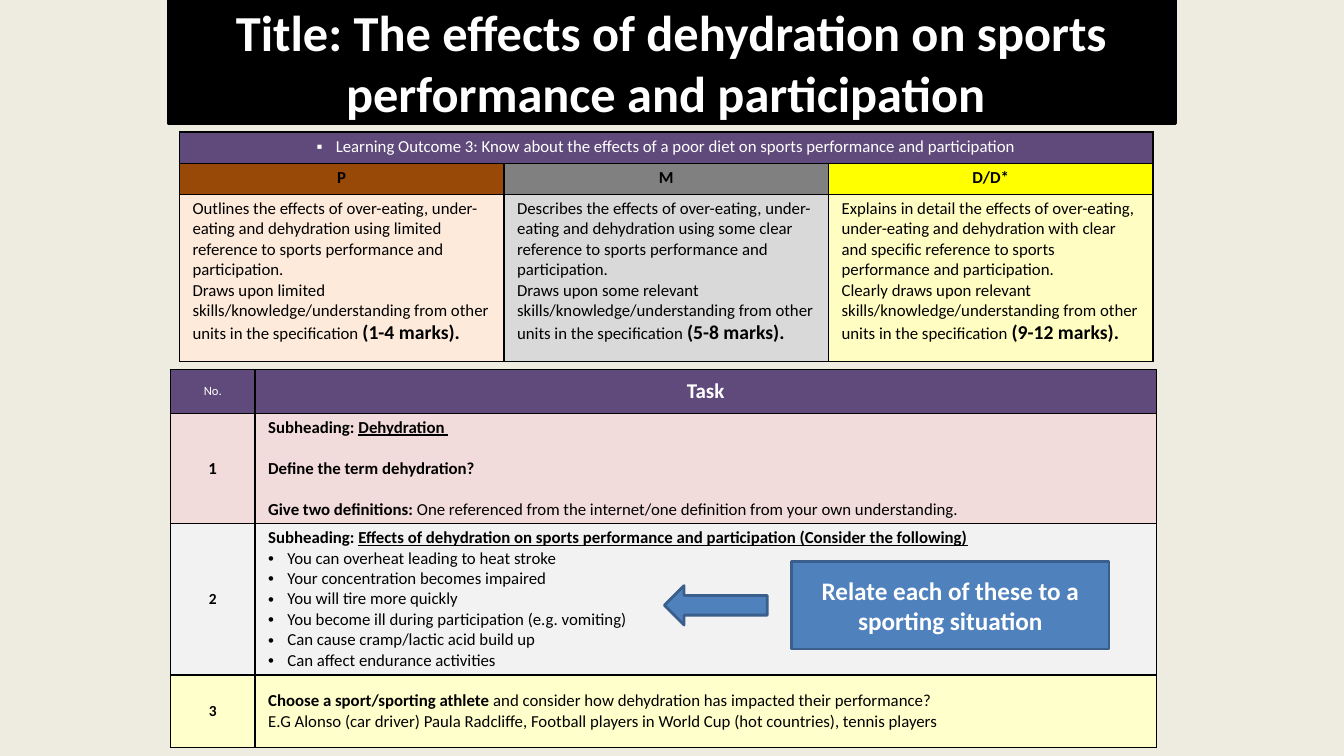
import pptx
import pptx.dml.color
import pptx.enum.shapes
import pptx.enum.text
import pptx.oxml
import pptx.oxml.ns
import pptx.util

SLIDE_WIDTH = pptx.util.Inches(13.33)
SLIDE_HEIGHT = pptx.util.Inches(7.5)
FONT = "Calibri"
PURPLE, BLACK, WHITE = "604A7B", "000000", "FFFFFF"
LEFT, CENTER = pptx.enum.text.PP_ALIGN.LEFT, pptx.enum.text.PP_ALIGN.CENTER
TOP, MIDDLE = pptx.enum.text.MSO_ANCHOR.TOP, pptx.enum.text.MSO_ANCHOR.MIDDLE
SHAPES = pptx.enum.shapes.MSO_SHAPE


# Lengths are percentages of the slide's size
def across(percent):
    return round(SLIDE_WIDTH * percent / 100)


def down(percent):
    return round(SLIDE_HEIGHT * percent / 100)


def color(hex_value):
    return pptx.dml.color.RGBColor.from_string(hex_value)


def paint(fill, hex_value):
    fill.solid()
    fill.fore_color.rgb = color(hex_value)


def make_element(xml):
    return pptx.oxml.parse_xml(xml.replace(">", f' {pptx.oxml.ns.nsdecls("a")}>', 1))


def add_bullet(paragraph, mark):
    properties = paragraph._p.get_or_add_pPr()
    indent = pptx.util.Inches(0.19)
    properties.set("marL", str(indent))
    properties.set("indent", str(-indent))
    properties.append(make_element('<a:buFont typeface="Arial"></a:buFont>'))
    properties.append(make_element(f'<a:buChar char="{mark}"></a:buChar>'))


def write(frame, paragraphs, size, ink=BLACK, align=LEFT, bullet=None, gap=0):
    """Each paragraph is a list of (text, style, optional size); style holds b, u, or * for a bullet."""
    for index, pieces in enumerate(paragraphs):
        paragraph = frame.add_paragraph() if index else frame.paragraphs[0]
        paragraph.alignment = align
        if index and gap:
            paragraph.space_before = pptx.util.Pt(gap)
        for text, style, *own_size in pieces:
            run = paragraph.add_run()
            run.text = text
            run.font.name = FONT
            run.font.size = pptx.util.Pt(own_size[0] if own_size else size)
            run.font.bold = "b" in style
            run.font.underline = "u" in style
            run.font.color.rgb = color(ink)
        if bullet and "*" in pieces[0][1]:
            add_bullet(paragraph, bullet)


def add_block(slide, kind, left, top, width, height, fill, outline):
    block = slide.shapes.add_shape(kind, across(left), down(top), across(width), down(height))
    block.shadow.inherit = False
    paint(block.fill, fill)
    block.line.color.rgb = color(outline)
    block.line.width = pptx.util.Pt(2)
    block.text_frame.word_wrap = True
    block.text_frame.vertical_anchor = MIDDLE
    return block


def add_grid(slide, left, top, columns, rows):
    grid = slide.shapes.add_table(len(rows), len(columns), across(left), down(top),
                                  across(sum(columns)), down(sum(rows))).table
    grid.first_row = grid.horz_banding = False
    for column, width in zip(grid.columns, columns):
        column.width = across(width)
    for row, height in zip(grid.rows, rows):
        row.height = down(height)
    for cell in grid.iter_cells():
        cell.margin_left = cell.margin_right = pptx.util.Inches(0.13)
        cell.margin_top = cell.margin_bottom = pptx.util.Inches(0.04)
        for position, side in enumerate("LRTB"):
            border = make_element(f'<a:ln{side} w="12700"><a:solidFill><a:srgbClr val="{BLACK}"/>'
                                  f'</a:solidFill></a:ln{side}>')
            cell._tc.get_or_add_tcPr().insert(position, border)
    return grid


def fill_cell(cell, fill, paragraphs, size=12, anchor=MIDDLE, **text_format):
    paint(cell.fill, fill)
    cell.vertical_anchor = anchor
    write(cell.text_frame, paragraphs, size, **text_format)


# Grading criteria
def add_criteria(slide):
    grid = add_grid(slide, 13.35, 17.47, [24.15] * 3, [4.13, 4.13, 22.13])
    outcome = "Learning Outcome 3: Know about the effects of a poor diet on sports performance and participation"
    grid.cell(0, 0).merge(grid.cell(0, 2))
    fill_cell(grid.cell(0, 0), PURPLE, [[(outcome, "*")]], anchor=TOP, ink=WHITE, align=CENTER, bullet="▪")

    grades = [
        ("P", "984807", "FDEADA", "Outlines", "using limited", "Draws upon limited", "1-4"),
        ("M", "808080", "D9D9D9", "Describes", "using some clear", "Draws upon some relevant", "5-8"),
        ("D/D*", "FFFF00", "FFFDC1", "Explains in detail", "with clear and specific",
         "Clearly draws upon relevant", "9-12"),
    ]
    for column, (grade, strong, pale, verb, depth, draws, marks) in enumerate(grades):
        fill_cell(grid.cell(1, column), strong, [[(grade, "b")]], anchor=TOP, align=CENTER)
        fill_cell(grid.cell(2, column), pale, [
            [(f"{verb} the effects of over-eating, under-eating and dehydration {depth} "
              "reference to sports performance and participation.", "")],
            [(f"{draws} skills/knowledge/understanding from other units in the specification ", ""),
             (f"({marks} marks).", "b", 14)],
        ], anchor=TOP)


# Numbered tasks
def add_tasks(slide):
    grid = add_grid(slide, 12.68, 48.93, [6.3, 67.05], [5.73, 14.53, 20, 9.6])
    fill_cell(grid.cell(0, 0), PURPLE, [[("No.", "")]], size=9, ink=WHITE, align=CENTER)
    fill_cell(grid.cell(0, 1), PURPLE, [[("Task", "b")]], size=15, ink=WHITE, align=CENTER)

    effects = ["You can overheat leading to heat stroke", "Your concentration becomes impaired",
               "You will tire more quickly", "You become ill during participation (e.g. vomiting)",
               "Can cause cramp/lactic acid build up", "Can affect endurance activities"]
    tasks = [
        ("F2DCDB", 12, 14.6, [
            [("Subheading: ", "b"), ("Dehydration ", "bu")],
            [("Define the term dehydration?", "b")],
            [("Give two definitions: ", "b"),
             ("One referenced from the internet/one definition from your own understanding.", "")]]),
        ("F2F2F2", 11, 0, [
            [("Subheading: ", "b"),
             ("Effects of dehydration on sports performance and participation (Consider the following)", "bu")],
            *[[(effect, "*")] for effect in effects]]),
        ("FFFFCC", 11, 0, [
            [("Choose a sport/sporting athlete ", "b"),
             ("and consider how dehydration has impacted their performance?", "")],
            [("E.G Alonso (car driver) Paula Radcliffe, Football players in World Cup (hot countries), "
              "tennis players", "")]]),
    ]
    for number, (fill, number_size, gap, paragraphs) in enumerate(tasks, 1):
        fill_cell(grid.cell(number, 0), fill, [[(str(number), "b")]], size=number_size, align=CENTER)
        fill_cell(grid.cell(number, 1), fill, paragraphs, bullet="•", gap=gap)


def main():
    deck = pptx.Presentation()
    deck.slide_width, deck.slide_height = SLIDE_WIDTH, SLIDE_HEIGHT
    slide = deck.slides.add_slide(deck.slide_layouts[6])
    paint(slide.background.fill, "EEECE1")

    # Title band
    title = add_block(slide, SHAPES.RECTANGLE, 12.5, 0, 74.95, 16.4, BLACK, BLACK)
    write(title.text_frame, [[("Title: The effects of dehydration on sports performance and participation ", "b")]],
          36, ink=WHITE, align=CENTER)

    add_criteria(slide)
    add_tasks(slide)

    # Prompt beside the effects
    prompt = add_block(slide, SHAPES.RECTANGLE, 58.89, 74.27, 23.63, 11.6, "4F81BD", "3A5F8C")
    write(prompt.text_frame, [[("Relate each of these to a sporting situation", "b")]],
          18, ink=WHITE, align=CENTER)
    add_block(slide, SHAPES.LEFT_ARROW, 49.44, 77.47, 7.65, 5.2, "4F81BD", "3A5F8C")

    deck.save("out.pptx")


if __name__ == "__main__":
    main()
